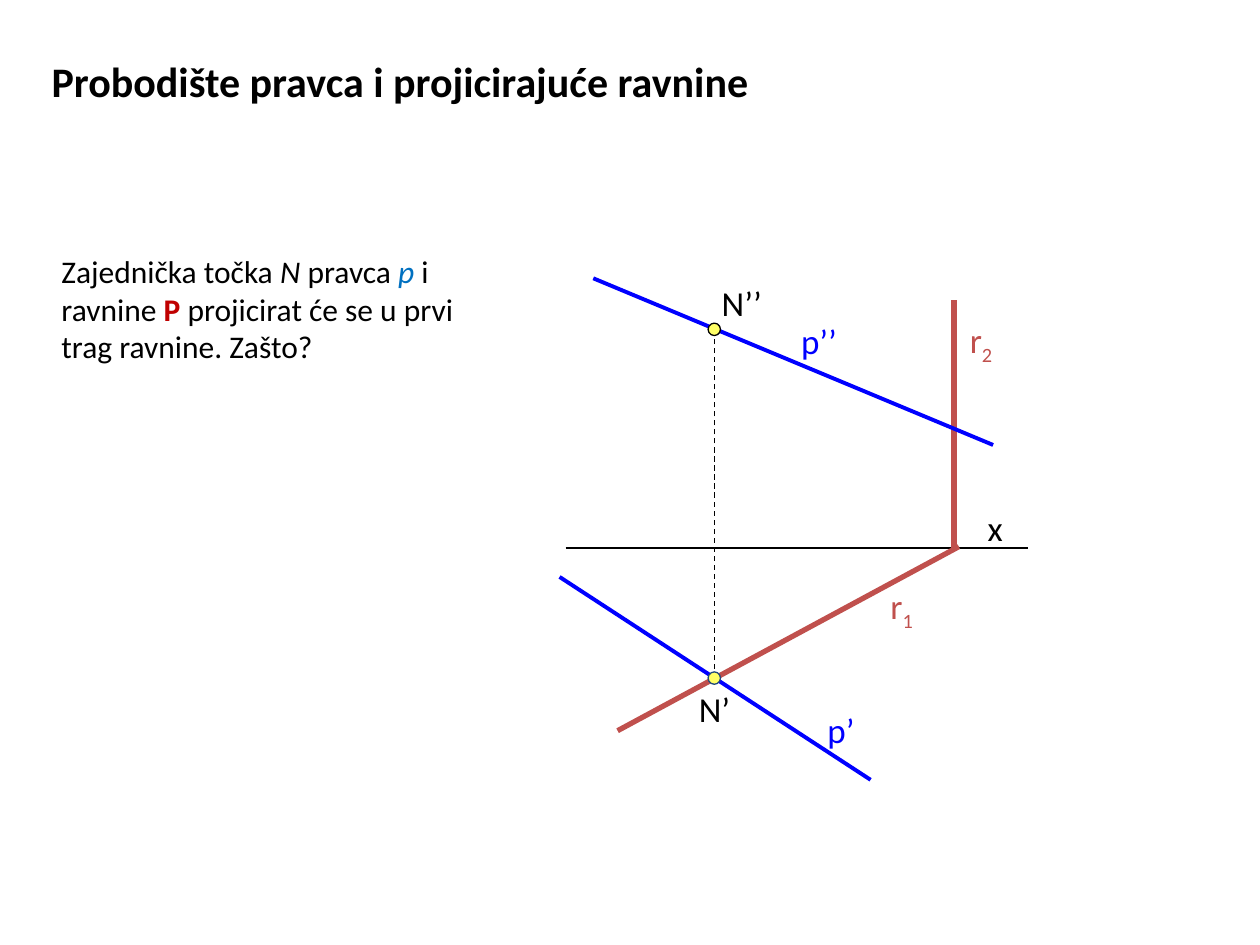
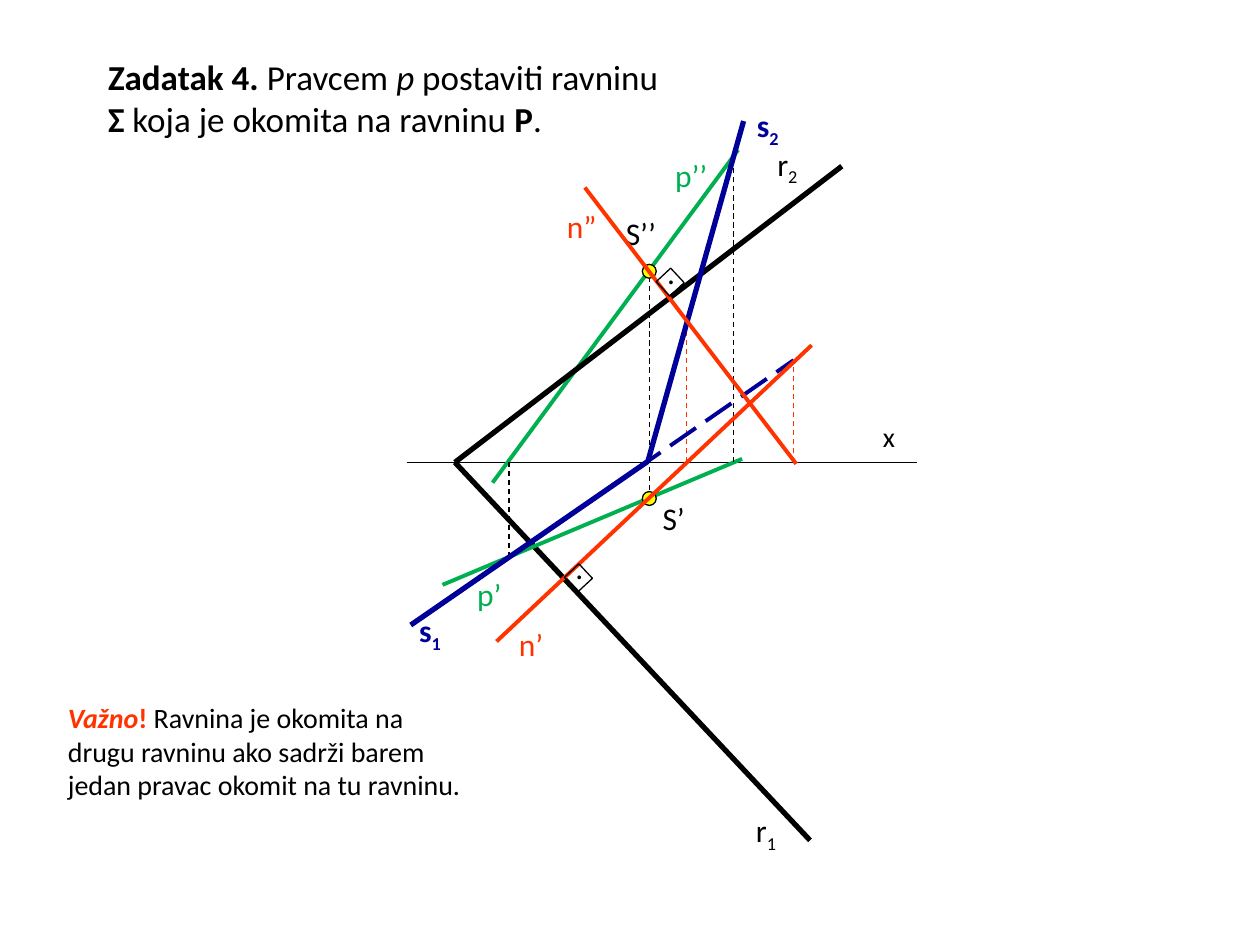
from dataclasses import dataclass

from pptx import Presentation
from pptx.dml.color import RGBColor
from pptx.enum.dml import MSO_LINE_DASH_STYLE as Dash
from pptx.enum.shapes import MSO_CONNECTOR as Connector, MSO_SHAPE as Shape
from pptx.enum.text import MSO_ANCHOR as Anchor, MSO_AUTO_SIZE as AutoSize
from pptx.oxml.ns import qn
from pptx.util import Cm, Pt
from lxml.etree import SubElement


@dataclass(frozen=True)
class Theme:
    font: str = "Calibri"
    # colours
    black: str = "000000"
    brick: str = "C0504D"
    blue: str = "0000FF"
    sky: str = "0070C0"
    red: str = "C00000"
    green: str = "00B050"
    orange: str = "FF3300"
    navy: str = "000099"
    slate: str = "1F497D"
    pale_yellow: str = "FFFF66"
    yellow: str = "FFFF00"
    # type sizes
    title: int = 24
    large: int = 20
    medium: int = 18
    small: int = 16
    # line widths
    thin: float = 0.75
    axis: float = 1.5
    line: float = 2.25
    trace: float = 3


class Drawing:
    """Draws on the current slide; all places and sizes are centimetres."""

    def __init__(self, deck, theme):
        self.deck = deck
        self.theme = theme
        self.page = None
        self.label_size = theme.large

    def new_page(self, label_size):
        self.page = self.deck.slides.add_slide(self.deck.slide_layouts[6])
        self.label_size = label_size

    def text(self, place, size, spans, anchor=Anchor.TOP):
        """Each span is (text, style); style may hold color, bold, italic, sub."""
        box = self.page.shapes.add_textbox(*map(Cm, place))
        frame = box.text_frame
        frame.word_wrap = True
        frame.auto_size = AutoSize.SHAPE_TO_FIT_TEXT
        frame.vertical_anchor = anchor
        para = frame.paragraphs[0]
        for words, style in spans:
            span = para.add_run()
            span.text = words
            font = span.font
            font.name = self.theme.font
            font.size = Pt(size)
            font.bold = style.get("bold", False)
            font.italic = style.get("italic", False)
            font.color.rgb = RGBColor.from_string(style.get("color", self.theme.black))
            if style.get("sub"):
                span._r.get_or_add_rPr().set("baseline", "-25000")

    def label(self, name, left, top, width, color, index="", bold=False, size=None):
        size = size or self.label_size
        style = {"color": color, "bold": bold}
        spans = [(name, style)]
        if index:
            spans.append((index, {**style, "sub": True}))
        self.text((left, top, width, 0.056 * size), size, spans)

    def line(self, start, end, color, width, dash=None):
        connector = self.page.shapes.add_connector(
            Connector.STRAIGHT, *map(Cm, (*start, *end)))
        connector.line.color.rgb = RGBColor.from_string(color)
        connector.line.width = Pt(width)
        if dash:
            connector.line.dash_style = dash
        SubElement(connector._element.spPr, qn("a:effectLst"))

    def ordinal(self, x, top, bottom, color):
        """Thin dashed line perpendicular to the axis."""
        self.line((x, bottom), (x, top), color, self.theme.thin, Dash.DASH)

    def mark(self, kind, center, size, outline, fill=None):
        x, y = center
        shape = self.page.shapes.add_shape(
            kind, *map(Cm, (x - size / 2, y - size / 2, size, size)))
        shape.shadow.inherit = False
        shape.line.color.rgb = RGBColor.from_string(outline)
        shape.line.width = Pt(self.theme.thin)
        if fill:
            shape.fill.solid()
            shape.fill.fore_color.rgb = RGBColor.from_string(fill)
        else:
            shape.fill.background()
        return shape

    def point(self, center, size, fill, outline):
        self.mark(Shape.OVAL, center, size, outline, fill)

    def right_angle(self, center):
        square = self.mark(Shape.RECTANGLE, center, 0.4, self.theme.black)
        square.rotation = 47
        x, y = center
        self.label(".", x - 0.31, y - 0.72, 0.69, self.theme.black)


def piercing_point_page(draw):
    theme = draw.theme
    draw.new_page(theme.large)
    draw.text((0.79, 0.99, 14.68, 1.27), theme.title,
              [("Probodište pravca i projicirajuće ravnine", {"bold": True})],
              Anchor.BOTTOM)

    # Axis and traces of the plane
    draw.line((11.4, 11.05), (20.73, 11.05), theme.black, theme.axis)
    draw.line((12.45, 14.73), (19.33, 11.02), theme.brick, theme.trace)
    draw.line((19.23, 6.05), (19.23, 11.1), theme.brick, theme.trace)
    draw.label("r", 17.7, 11.66, 1.27, theme.brick, "1")
    draw.label("r", 19.3, 6.3, 1.37, theme.brick, "2")

    # Projections of line p
    draw.line((11.96, 5.61), (20.02, 8.97), theme.blue, theme.line)
    draw.line((11.28, 11.63), (17.55, 15.72), theme.blue, theme.line)
    draw.label("p’’", 15.9, 6.32, 1.93, theme.blue)
    draw.label("p’", 16.43, 14.15, 1.75, theme.blue)

    # Explanation
    draw.text((0.99, 4.95, 8.99, 2.57), theme.medium, [
        ("Zajednička točka ", {}),
        ("N", {"italic": True}),
        (" pravca ", {}),
        ("p", {"italic": True, "color": theme.sky}),
        (" i ravnine ", {}),
        ("P", {"bold": True, "color": theme.red}),
        (" projicirat će se u prvi trag ravnine. Zašto?", {}),
    ])

    # Projections of point N
    n_x = 14.4
    draw.point((n_x, 13.67), 0.25, theme.pale_yellow, theme.slate)
    draw.label("N’", 13.84, 13.74, 1.45, theme.black)
    draw.ordinal(n_x, 6.6, 13.49, theme.black)
    draw.point((n_x, 6.64), 0.25, theme.pale_yellow, theme.black)
    draw.label("N’’", 14.3, 5.56, 1.75, theme.black)
    draw.label("x", 19.66, 10.08, 1.9, theme.black)


def perpendicular_plane_page(draw):
    theme = draw.theme
    draw.new_page(theme.medium)
    axis_y = 9.32
    draw.text((1.93, 0.99, 11.96, 1.96), theme.large, [
        ("Zadatak 4. ", {"bold": True}),
        ("Pravcem ", {}),
        ("p", {"italic": True}),
        (" postaviti ravninu ", {}),
        ("Σ", {"bold": True}),
        (" koja je okomita na ravninu ", {}),
        ("P", {"bold": True}),
        (".", {}),
    ])

    # Axis, line p and traces of plane P
    draw.line((8.2, axis_y), (18.49, axis_y), theme.black, theme.thin)
    draw.label("x", 17.55, 8.33, 0.74, theme.black, size=theme.small)
    draw.line((14.88, 3.02), (9.93, 9.73), theme.green, theme.line)
    r_node = (9.17, axis_y)
    draw.line((16.97, 3.35), r_node, theme.black, theme.trace)
    draw.line(r_node, (16.33, 16.94), theme.black, theme.trace)
    draw.label("r", 14.99, 16.23, 1.27, theme.black, "1")
    draw.label("r", 15.42, 2.79, 1.27, theme.black, "2")
    draw.line((14.96, 9.25), (8.92, 11.79), theme.green, theme.line)
    draw.ordinal(10.26, axis_y, 11.23, theme.black)
    draw.ordinal(14.78, 3.18, axis_y, theme.black)
    draw.label("p’", 9.37, 11.46, 1.17, theme.green)
    draw.label("p’’", 13.36, 3.02, 1.47, theme.green)

    # Point S on line p
    s_x = 13.09
    draw.ordinal(s_x, 5.36, 10.06, theme.black)
    for s_y in (5.47, 10.05):
        draw.point((s_x, s_y), 0.28, theme.yellow, theme.black)
    draw.label("S’", 13.11, 9.93, 1.27, theme.black)
    draw.label("S’’", 12.37, 4.19, 1.42, theme.black)

    # Traces of plane Σ
    n_trace = (16, 7.26)
    draw.ordinal(n_trace[0], n_trace[1], axis_y, theme.orange)
    draw.ordinal(13.84, 6.45, axis_y, theme.orange)
    s_node = (13.06, 9.3)
    draw.line((14.99, 2.44), s_node, theme.navy, theme.trace)
    draw.label("s", 15.01, 2.01, 1.17, theme.navy, "2", bold=True)
    draw.text((1.12, 14, 8.69, 2.29), theme.small, [
        ("Važno", {"bold": True, "italic": True, "color": theme.orange}),
        ("!", {"bold": True, "color": theme.orange}),
        (" Ravnina je okomita na drugu ravninu ako sadrži barem jedan"
         " pravac okomit na tu ravninu.", {}),
    ])
    draw.line((8.51, 12.45), n_trace, theme.navy, theme.line, Dash.LONG_DASH)
    draw.label("s", 8.2, 12.19, 1.7, theme.navy, "1", bold=True)
    draw.line(s_node, (8.28, 12.6), theme.navy, theme.trace)

    # Normal n to plane P
    draw.line((10.01, 12.93), (16.36, 6.96), theme.orange, theme.line)
    draw.label("n’", 10.21, 12.47, 1.4, theme.orange)
    draw.right_angle((11.66, 11.65))
    draw.line((11.79, 3.78), (16.05, 9.35), theme.orange, theme.line)
    draw.label("n”", 11.18, 4.04, 1.42, theme.orange)
    draw.right_angle((13.51, 5.69))


def main():
    deck = Presentation()
    deck.slide_width = Cm(25.4)
    deck.slide_height = Cm(19.05)
    draw = Drawing(deck, Theme())
    piercing_point_page(draw)
    perpendicular_plane_page(draw)
    deck.save("out.pptx")


if __name__ == "__main__":
    main()
